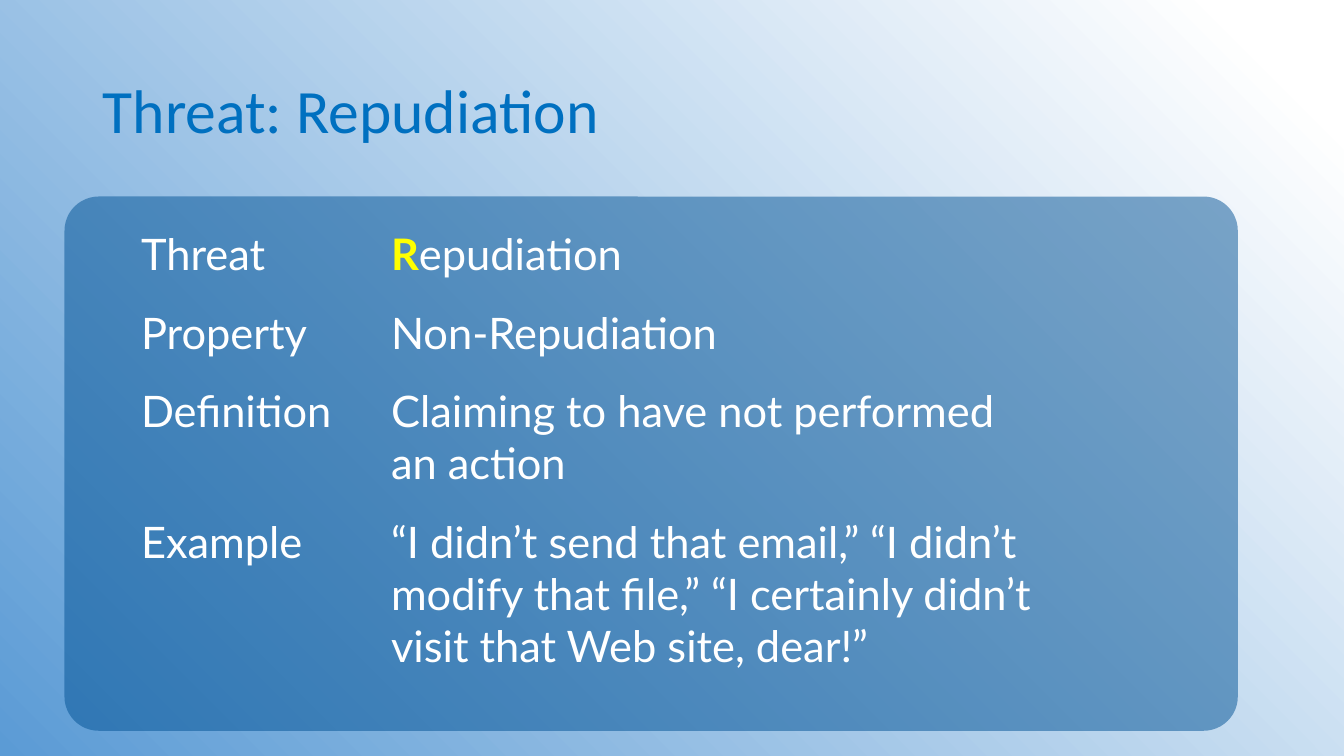
from lxml.etree import SubElement
from pptx import Presentation
from pptx.dml.color import RGBColor
from pptx.enum.shapes import MSO_SHAPE
from pptx.enum.text import MSO_ANCHOR, MSO_AUTO_SIZE, PP_ALIGN
from pptx.oxml.ns import qn
from pptx.util import Pt

WHITE = RGBColor(0xFF, 0xFF, 0xFF)
SKY = RGBColor(0x5B, 0x9B, 0xD5)
NAVY = RGBColor(0x00, 0x51, 0x94)
BLUE = RGBColor(0x00, 0x70, 0xC0)
YELLOW = RGBColor(0xFF, 0xFF, 0x00)

NO_GRID_STYLE = "{2D5ABB26-0587-4C30-8999-92F81FD0307C}"
COLUMN_WIDTHS = (178.6, 518.4)
ROW_HEIGHTS = (56, 56, 93, 147.4)
CELL_MARGIN = Pt(9.4)
ROWS = (
    ("Threat", "Repudiation"),
    ("Property", "Non-Repudiation"),
    ("Definition", "Claiming to have not performed\nan action"),
    ("Example", "“I didn’t send that email,” “I didn’t modify that file,” "
                "“I certainly didn’t visit that Web site, dear!”"),
)

presentation = Presentation()
presentation.slide_width = Pt(960)
presentation.slide_height = Pt(540)
slide = presentation.slides.add_slide(presentation.slide_layouts[5])

# Background
background = slide.background.fill
background.gradient()
background.gradient_angle = 225
for stop, position, color in zip(background.gradient_stops, (0.06, 1), (WHITE, SKY)):
    stop.position = position
    stop.color.rgb = color

# Title
title = slide.shapes.title
title.left, title.top, title.width, title.height = Pt(66.2), Pt(28.8), Pt(828), Pt(104.4)
title.text_frame.auto_size = MSO_AUTO_SIZE.NONE
title.text_frame.vertical_anchor = MSO_ANCHOR.MIDDLE
paragraph = title.text_frame.paragraphs[0]
paragraph.text = "Threat: Repudiation"
paragraph.alignment = PP_ALIGN.LEFT
paragraph.line_spacing = 0.9
paragraph.font.name = "Calibri"
paragraph.font.size = Pt(44)
paragraph.font.color.rgb = BLUE

# Translucent panel, placed behind the title
panel = slide.shapes.add_shape(
    MSO_SHAPE.ROUNDED_RECTANGLE, Pt(46.1), Pt(140.4), Pt(838.1), Pt(381.6))
panel.adjustments[0] = 0.064
panel.shadow.inherit = False
panel.line.fill.background()
panel.fill.solid()
panel.fill.fore_color.rgb = NAVY
panel_color = panel.fill._xPr.find(qn("a:solidFill"))[0]
SubElement(panel_color, qn("a:alpha"), val="50000")
title._element.addprevious(panel._element)

# Threat table
table = slide.shapes.add_table(
    len(ROWS), len(COLUMN_WIDTHS), Pt(91.4), Pt(153.4),
    Pt(sum(COLUMN_WIDTHS)), Pt(sum(ROW_HEIGHTS))).table
table.first_row = False
table.horz_banding = False
table._tbl.tblPr.find(qn("a:tableStyleId")).text = NO_GRID_STYLE
for column, width in zip(table.columns, COLUMN_WIDTHS):
    column.width = Pt(width)

for row, height, texts in zip(table.rows, ROW_HEIGHTS, ROWS):
    row.height = Pt(height)
    for cell, text in zip(row.cells, texts):
        cell.fill.background()
        cell.margin_left = cell.margin_right = CELL_MARGIN
        cell.margin_top = cell.margin_bottom = CELL_MARGIN
        paragraph = cell.text_frame.paragraphs[0]
        paragraph.text = text
        paragraph.font.name = "Lato"
        paragraph.font.size = Pt(31)
        paragraph.font.color.rgb = WHITE

# Highlighted initial of the threat
paragraph = table.cell(0, 1).text_frame.paragraphs[0]
initial = paragraph.runs[0]
remainder = paragraph.add_run()
initial.text, remainder.text = "R", "epudiation"
initial.font.bold = True
initial.font.color.rgb = YELLOW

presentation.save("out.pptx")
